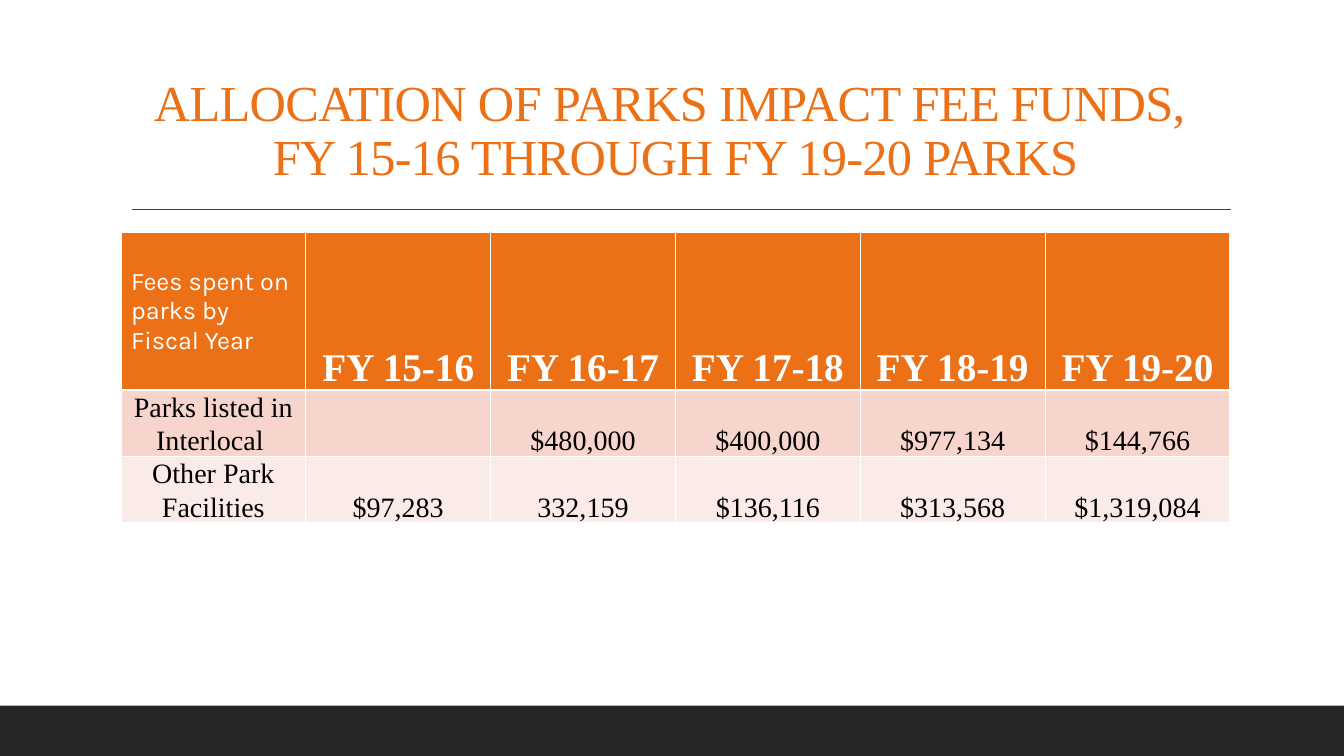
from lxml.etree import SubElement
from pptx import Presentation
from pptx.dml.color import RGBColor
from pptx.enum.shapes import MSO_CONNECTOR, MSO_SHAPE
from pptx.enum.text import MSO_ANCHOR, MSO_AUTO_SIZE, PP_ALIGN
from pptx.oxml.ns import qn
from pptx.util import Pt

PX = 9144  # EMU per px, 100 px to the inch
ORANGE, WHITE, BLACK = "EC7016", "FFFFFF", "000000"
SERIF = "Times New Roman"


def paint(fill, color):
    fill.solid()
    fill.fore_color.rgb = RGBColor.from_string(color)


def write(frame, text, size, color, font=SERIF, bold=False,
          align=PP_ALIGN.CENTER, spacing=1.07, tracking=0):
    """Fill the first paragraph; a newline in the text is a line break."""
    paragraph = frame.paragraphs[0]
    paragraph.text = text
    paragraph.alignment = align
    paragraph.line_spacing = spacing
    for run in paragraph.runs:
        run.font.size = Pt(size)
        run.font.name = font
        run.font.bold = bold
        paint(run.font.fill, color)
        if tracking:
            run.font._element.set("spc", str(tracking))


prs = Presentation()
prs.slide_width, prs.slide_height = 1333 * PX, 750 * PX
slide = prs.slides.add_slide(prs.slide_layouts[5])
shapes = slide.shapes
paint(slide.background.fill, WHITE)

footer_band = shapes.add_shape(MSO_SHAPE.RECTANGLE, 0, 700 * PX, 1333 * PX, 50 * PX)
footer_band.shadow.inherit = False
paint(footer_band.fill, "262626")
footer_band.line.fill.background()

title_rule = shapes.add_connector(
    MSO_CONNECTOR.STRAIGHT, 131 * PX, 208 * PX, 1221 * PX, 208 * PX)
title_rule.line.width = Pt(1)
paint(title_rule.line.fill, "404040")
SubElement(title_rule._element.spPr, qn("a:effectLst"))

title = shapes.title
title.left, title.top, title.width, title.height = 120 * PX, 31 * PX, 1100 * PX, 159 * PX
title.text_frame.word_wrap = True
title.text_frame.auto_size = MSO_AUTO_SIZE.NONE
title.text_frame.vertical_anchor = MSO_ANCHOR.BOTTOM
write(title.text_frame,
      "ALLOCATION OF PARKS IMPACT FEE FUNDS, \nFY 15-16 THROUGH FY 19-20 PARKS",
      36, ORANGE, spacing=0.9, tracking=-50)

fees = [
    ["Fees spent on parks by Fiscal Year",
     "FY 15-16", "FY 16-17", "FY 17-18", "FY 18-19", "FY 19-20"],
    ["Parks listed in\nInterlocal ", "", "$480,000", "$400,000", "$977,134", "$144,766"],
    ["Other Park Facilities",
     "$97,283", "332,159", "$136,116", "$313,568", "$1,319,084"],
]
row_heights = [156, 66, 66]
row_fills = [ORANGE, "F8D5CC", "FBEBE8"]

table = shapes.add_table(3, 6, 120 * PX, 231 * PX, 1100 * PX, sum(row_heights) * PX).table
for r, values in enumerate(fees):
    table.rows[r].height = row_heights[r] * PX
    for c, value in enumerate(values):
        cell = table.cell(r, c)
        if r == c == 0:
            cell.vertical_anchor = MSO_ANCHOR.MIDDLE
            write(cell.text_frame, value, 18, WHITE, font="Karla",
                  align=PP_ALIGN.LEFT, spacing=1.0)
        else:
            cell.vertical_anchor = MSO_ANCHOR.BOTTOM
            cell.margin_left = cell.margin_right = 7 * PX
            cell.margin_top = cell.margin_bottom = 0
            if r == 0:
                write(cell.text_frame, value, 28, WHITE, bold=True)
            else:
                write(cell.text_frame, value, 20, BLACK)

        cell_format = cell._tc.get_or_add_tcPr()
        for side in ("a:lnL", "a:lnR", "a:lnT", "a:lnB"):
            border = SubElement(cell_format, qn(side), w=str(Pt(1)))
            border_fill = SubElement(border, qn("a:solidFill"))
            SubElement(border_fill, qn("a:srgbClr"), val=WHITE)
        paint(cell.fill, row_fills[r])

prs.save("out.pptx")
